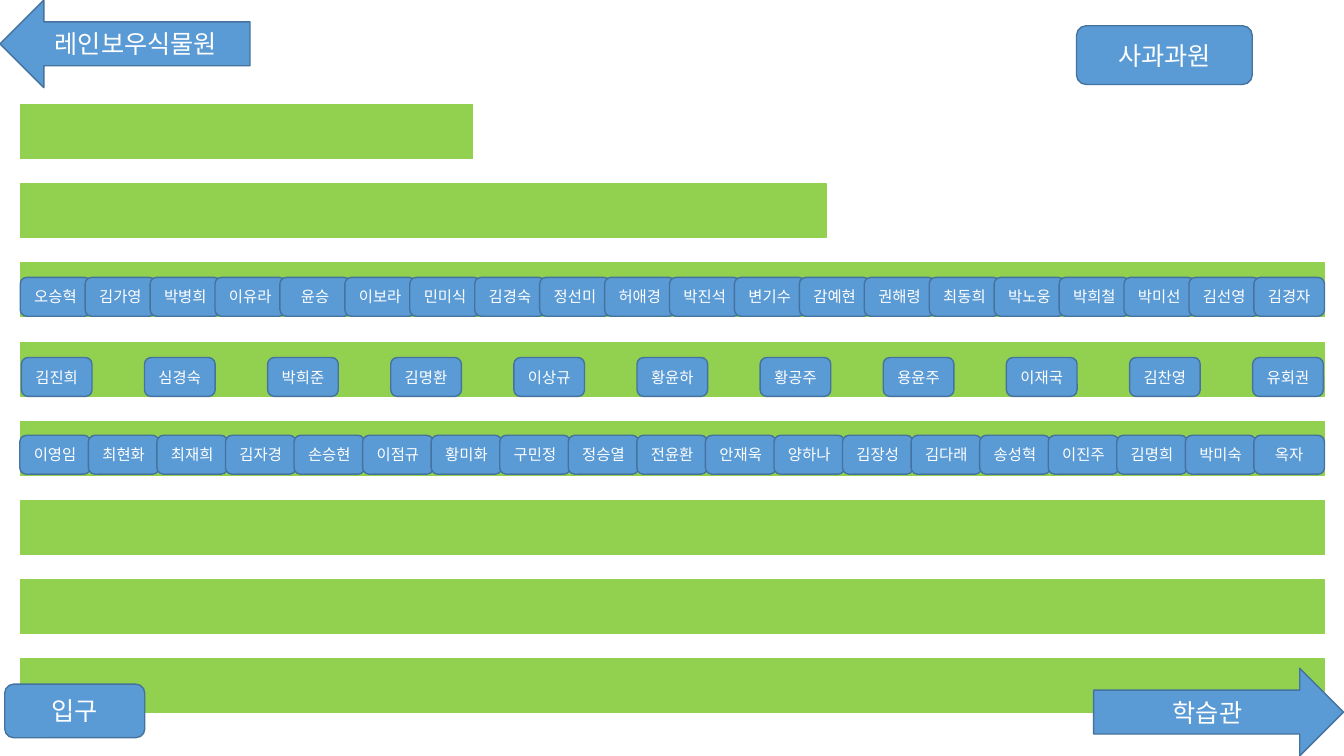
from dataclasses import dataclass

from lxml import etree
from pptx import Presentation
from pptx import util as u
from pptx.dml import color
from pptx.enum import shapes, text
from pptx.oxml import ns

COLORS = {"bed": "92D050", "label": "5B9BD5", "label_edge": "43739E", "text": "FFFFFF"}
FONT = "Noto Sans CJK KR"
SHAPE = shapes.MSO_SHAPE


@dataclass
class Box:
    """Position and size in centimetres."""
    left: float
    top: float
    width: float
    height: float


@dataclass
class Sign:
    wording: str
    kind: SHAPE
    box: Box


@dataclass
class PeopleRow:
    first_left: float
    last_left: float
    top: float
    names: str


# Garden beds, from top to bottom
BED_LEFT, BED_HEIGHT = 0.51, 1.35
FIRST_BED_TOP, LAST_BED_TOP = 2.64, 16.61
BED_WIDTHS = [11.4, 20.32] + [32.87] * 6

# Name tags standing on the beds
TAG_WIDTH, TAG_HEIGHT = 1.78, 0.98
PEOPLE_ROWS = [
    PeopleRow(0.51, 31.6, 6.99,
              "오승혁 김가영 박병희 이유라 윤승 이보라 민미식 김경숙 정선미 허애경 "
              "박진석 변기수 감예현 권해령 최동희 박노웅 박희철 박미선 김선영 김경자"),
    PeopleRow(0.54, 31.57, 9.01,
              "김진희 심경숙 박희준 김명환 이상규 황윤하 황공주 용윤주 이재국 김찬영 유회권"),
    PeopleRow(0.5, 31.6, 10.97,
              "이영임 최현화 최재희 김자경 손승현 이점규 황미화 구민정 정승열 전윤환 "
              "안재욱 양하나 김장성 김다래 송성혁 이진주 김명희 박미숙 옥자"),
]

# Direction signs and places
SIGNS = [
    Sign("레인보우식물원", SHAPE.LEFT_ARROW, Box(0, 0, 6.3, 2.21)),
    Sign("사과과원", SHAPE.ROUNDED_RECTANGLE, Box(27.13, 0.65, 4.43, 1.48)),
    Sign("학습관", SHAPE.RIGHT_ARROW, Box(27.56, 16.84, 6.3, 2.21)),
    Sign("입구", SHAPE.ROUNDED_RECTANGLE, Box(0.12, 17.24, 3.53, 1.35)),
]


def draw_shape(slide, kind: SHAPE, box: Box, fill: str, edge: str):
    shape = slide.shapes.add_shape(
        kind, u.Cm(box.left), u.Cm(box.top), u.Cm(box.width), u.Cm(box.height))
    shape.shadow.inherit = False
    shape.fill.solid()
    shape.fill.fore_color.rgb = color.RGBColor.from_string(COLORS[fill])
    shape.line.color.rgb = color.RGBColor.from_string(COLORS[edge])
    shape.line.width = u.Pt(1)
    return shape


def draw_sign(slide, sign: Sign, size: int) -> None:
    shape = draw_shape(slide, sign.kind, sign.box, "label", "label_edge")
    frame = shape.text_frame
    frame.word_wrap = True
    frame.vertical_anchor = text.MSO_ANCHOR.MIDDLE
    frame.margin_left = frame.margin_right = u.Cm(0.1)
    paragraph = frame.paragraphs[0]
    paragraph.alignment = text.PP_ALIGN.CENTER
    run = paragraph.add_run()
    run.text = sign.wording
    run.font.size = u.Pt(size)
    run.font.color.rgb = color.RGBColor.from_string(COLORS["text"])
    run.font.name = FONT
    # Hangul takes the East Asian typeface
    etree.SubElement(run._r.get_or_add_rPr(), ns.qn("a:ea"), typeface=FONT)


def draw_beds(slide) -> None:
    pitch = (LAST_BED_TOP - FIRST_BED_TOP) / (len(BED_WIDTHS) - 1)
    for index, width in enumerate(BED_WIDTHS):
        bed = Box(BED_LEFT, FIRST_BED_TOP + index * pitch, width, BED_HEIGHT)
        draw_shape(slide, SHAPE.RECTANGLE, bed, "bed", "bed")


def draw_people(slide, row: PeopleRow) -> None:
    names = row.names.split()
    pitch = (row.last_left - row.first_left) / (len(names) - 1)
    for index, name in enumerate(names):
        tag = Box(row.first_left + index * pitch, row.top, TAG_WIDTH, TAG_HEIGHT)
        draw_sign(slide, Sign(name, SHAPE.ROUNDED_RECTANGLE, tag), 11)


def main() -> None:
    deck = Presentation()
    deck.slide_width, deck.slide_height = u.Cm(33.87), u.Cm(19.05)
    garden_map = deck.slides.add_slide(deck.slide_layouts[6])
    draw_beds(garden_map)
    for row in PEOPLE_ROWS:
        draw_people(garden_map, row)
    for sign in SIGNS:
        draw_sign(garden_map, sign, 18)
    deck.save("out.pptx")


if __name__ == "__main__":
    main()
